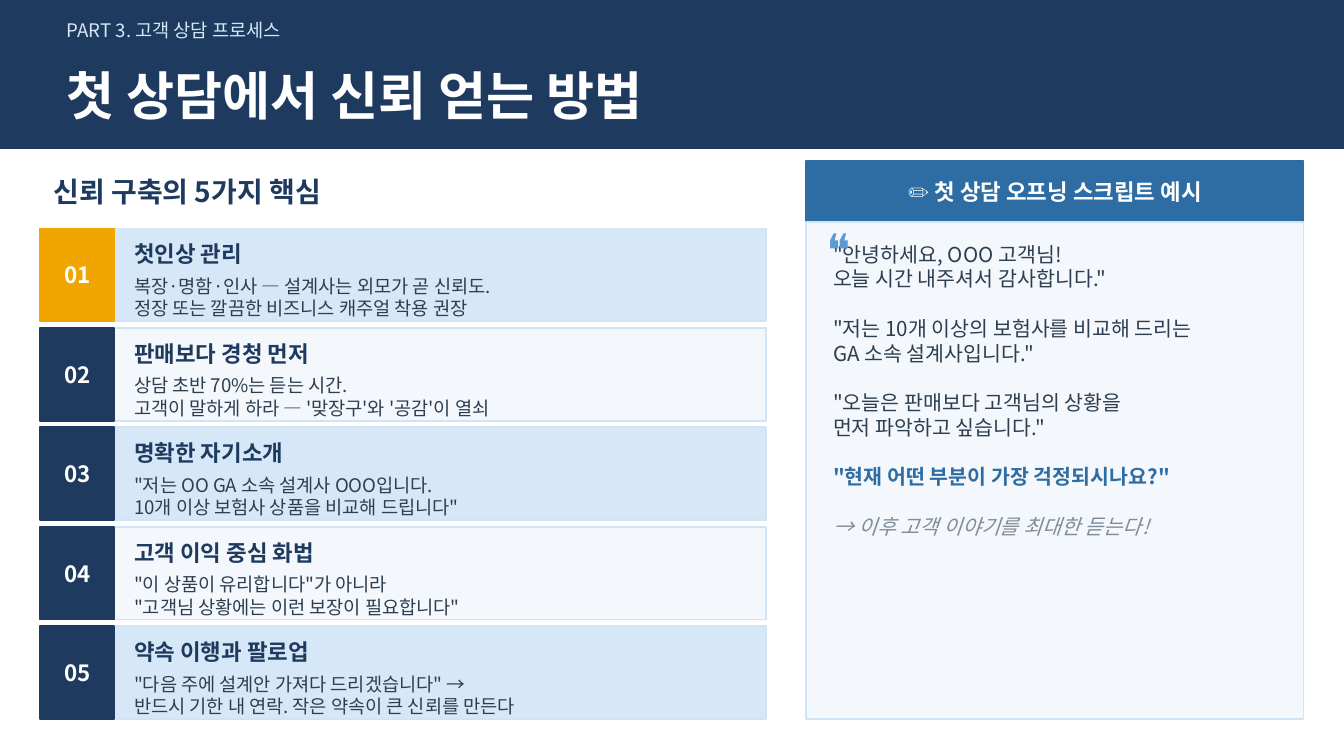
from pptx import Presentation
from pptx.dml.color import RGBColor
from pptx.enum.shapes import MSO_SHAPE
from pptx.enum.text import MSO_ANCHOR, PP_ALIGN
from pptx.util import Inches, Pt

RECTANGLE = MSO_SHAPE.RECTANGLE
TOP, MIDDLE = MSO_ANCHOR.TOP, MSO_ANCHOR.MIDDLE
LEFT, CENTER = PP_ALIGN.LEFT, PP_ALIGN.CENTER

NAVY = RGBColor(0x1E, 0x3A, 0x5F)
BLUE = RGBColor(0x2E, 0x6D, 0xA4)
QUOTE_BLUE = RGBColor(0x5B, 0x9B, 0xD5)
SKY = RGBColor(0xD6, 0xE8, 0xF8)
PALE = RGBColor(0xF4, 0xF7, 0xFB)
BORDER = RGBColor(0xD0, 0xE4, 0xF5)
AMBER = RGBColor(0xF0, 0xA5, 0x00)
INK = RGBColor(0x2C, 0x3E, 0x50)
GRAY = RGBColor(0x7F, 0x8C, 0x9A)
WHITE = RGBColor(0xFF, 0xFF, 0xFF)

KOREAN_FONT = "Noto Sans CJK KR"


def write(para, text, *, size, color, font=KOREAN_FONT, bold=False,
          italic=False, align=LEFT, before=0):
    """Fill one paragraph; a vertical tab in the text is a line break."""
    para.text = text
    para.alignment = align
    para.space_before = Pt(before)
    for span in para.runs:
        span.font.name = font
        span.font.size = Pt(size)
        span.font.bold = bold
        span.font.italic = italic
        span.font.color.rgb = color


class SlideBuilder:
    """Holds the current slide and draws its elements in one style."""

    def __init__(self, page):
        self.page = page

    def panel(self, left, top, width, height, fill, line=None):
        shape = self.page.shapes.add_shape(
            RECTANGLE, Inches(left), Inches(top), Inches(width), Inches(height))
        shape.shadow.inherit = False
        shape.fill.solid()
        shape.fill.fore_color.rgb = fill
        shape.line.color.rgb = line or fill
        shape.line.width = Pt(1)

    def frame(self, left, top, width, height, anchor=MIDDLE):
        box = self.page.shapes.add_textbox(
            Inches(left), Inches(top), Inches(width), Inches(height))
        box.text_frame.word_wrap = True
        box.text_frame.vertical_anchor = anchor
        return box.text_frame

    def text(self, left, top, width, height, *lines, **style):
        frame = self.frame(left, top, width, height)
        for index, line in enumerate(lines):
            para = frame.add_paragraph() if index else frame.paragraphs[0]
            write(para, line, **style)

    def card(self, top, number, heading, lines, fill, badge):
        height, badge_width = 0.69, 0.55
        self.panel(0.3, top, 5.4, height, fill, BORDER)
        self.panel(0.3, top, badge_width, height, badge)
        self.text(0.3, top, badge_width, height, f"{number:02d}",
                  size=12, color=WHITE, bold=True, align=CENTER)
        self.text(0.9, top + 0.03, 1.6, 0.32, heading,
                  size=12, color=NAVY, bold=True)
        self.text(0.9, top + 0.32, 4.7, 0.38, *lines, size=10, color=INK)

    def script(self, left, top, width, height, parts):
        frame = self.frame(left, top, width, height, TOP)
        for index, (line, style) in enumerate(parts):
            para = frame.add_paragraph() if index else frame.paragraphs[0]
            write(para, line, size=11, before=13.3 if index else 0, **style)


CARDS = [
    ("첫인상 관리",
     ["복장·명함·인사 — 설계사는 외모가 곧 신뢰도.",
      "정장 또는 깔끔한 비즈니스 캐주얼 착용 권장"]),
    ("판매보다 경청 먼저",
     ["상담 초반 70%는 듣는 시간.",
      "고객이 말하게 하라 — '맞장구'와 '공감'이 열쇠"]),
    ("명확한 자기소개",
     ['"저는 OO GA 소속 설계사 OOO입니다.',
      '10개 이상 보험사 상품을 비교해 드립니다"']),
    ("고객 이익 중심 화법",
     ['"이 상품이 유리합니다"가 아니라',
      '"고객님 상황에는 이런 보장이 필요합니다"']),
    ("약속 이행과 팔로업",
     ['"다음 주에 설계안 가져다 드리겠습니다" →',
      "반드시 기한 내 연락. 작은 약속이 큰 신뢰를 만든다"]),
]

SPEECH = {"color": INK}
SCRIPT = [
    ('"안녕하세요, OOO 고객님!\v오늘 시간 내주셔서 감사합니다."', SPEECH),
    ('"저는 10개 이상의 보험사를 비교해 드리는\vGA 소속 설계사입니다."', SPEECH),
    ('"오늘은 판매보다 고객님의 상황을\v먼저 파악하고 싶습니다."', SPEECH),
    ('"현재 어떤 부분이 가장 걱정되시나요?"', {"color": BLUE, "bold": True}),
    ("→ 이후 고객 이야기를 최대한 듣는다!", {"color": GRAY, "italic": True}),
]


def main():
    deck = Presentation()
    deck.slide_width = Inches(10)
    deck.slide_height = Inches(10) * 9 // 16
    slide = SlideBuilder(deck.slides.add_slide(deck.slide_layouts[6]))

    # Header band
    slide.panel(0, 0, 10, 1.1, NAVY)
    slide.text(0.4, 0.05, 9, 0.35, "PART 3. 고객 상담 프로세스", size=10, color=SKY)
    slide.text(0.4, 0.38, 9, 0.65, "첫 상담에서 신뢰 얻는 방법",
               size=28, color=WHITE, bold=True)

    # Five numbered cards
    slide.text(0.3, 1.2, 5.5, 0.45, "신뢰 구축의 5가지 핵심",
               size=15, color=NAVY, bold=True)
    for index, (heading, lines) in enumerate(CARDS):
        slide.card(1.7 + 0.74 * index, index + 1, heading, lines,
                   fill=PALE if index % 2 else SKY,
                   badge=NAVY if index else AMBER)

    # Opening script
    slide.panel(6, 1.2, 3.7, 0.45, BLUE)
    slide.text(6, 1.2, 3.7, 0.45, "✏️ 첫 상담 오프닝 스크립트 예시",
               size=12, color=WHITE, bold=True, align=CENTER)
    slide.panel(6, 1.65, 3.7, 3.7, PALE, BORDER)
    slide.script(6.1, 1.75, 3.5, 3.5, SCRIPT)
    slide.text(6.05, 1.6, 0.5, 0.5, "❝", size=24, color=QUOTE_BLUE, font="Calibri")

    deck.save("out.pptx")


if __name__ == "__main__":
    main()
